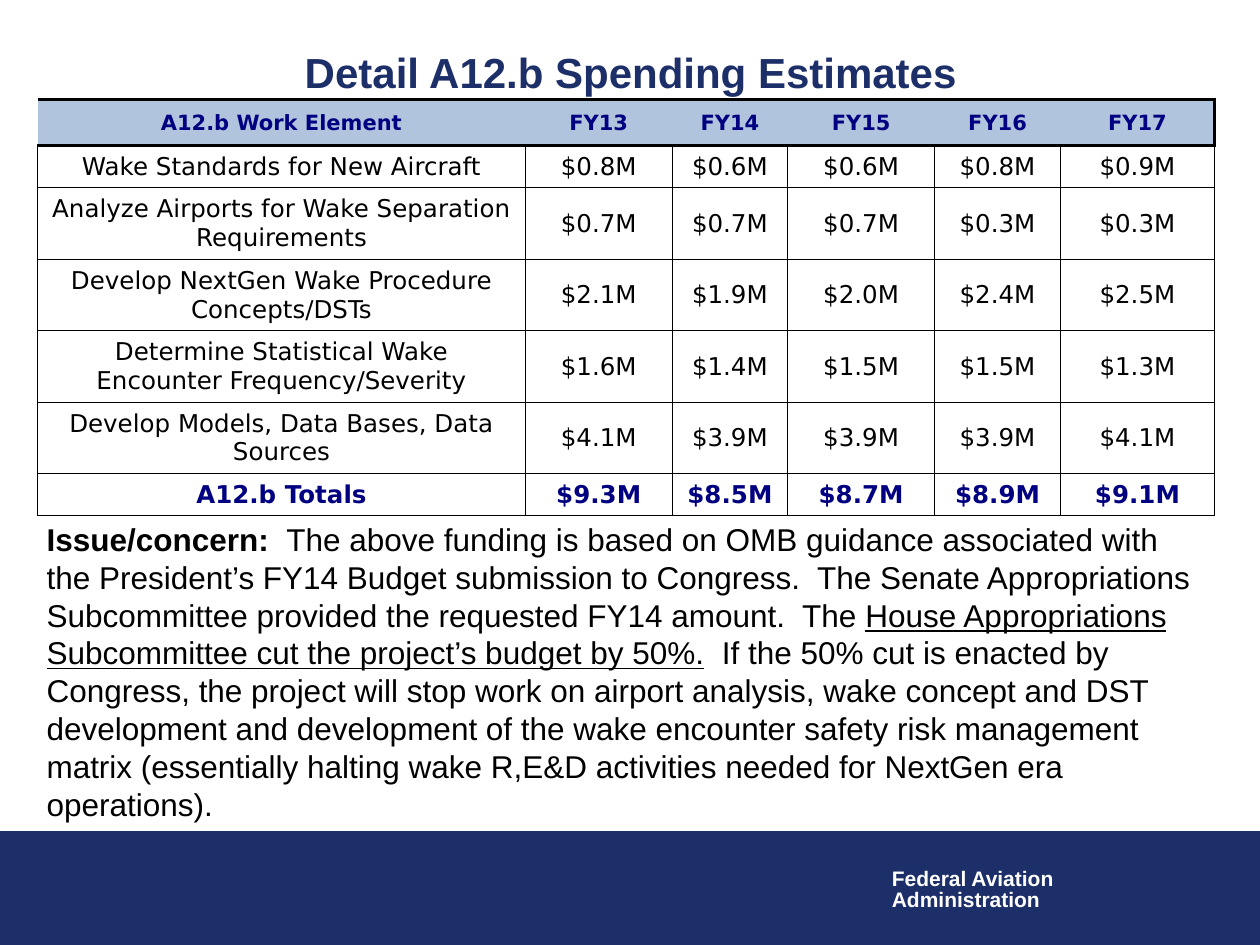
from dataclasses import dataclass

import lxml.etree
import pptx
import pptx.dml.color
import pptx.enum.shapes
import pptx.enum.text
import pptx.oxml.ns
import pptx.util
from pptx.util import Cm

Rgb = pptx.dml.color.RGBColor
CENTER = pptx.enum.text.PP_ALIGN.CENTER
MIDDLE = pptx.enum.text.MSO_ANCHOR.MIDDLE


@dataclass(frozen=True)
class Style:
    size: float
    color: Rgb
    bold: bool = False
    family: str = "Arial"


@dataclass(frozen=True)
class Theme:
    navy: Rgb = Rgb(0x1D, 0x2F, 0x68)
    header_fill: Rgb = Rgb(0xB0, 0xC4, 0xDE)
    white: Rgb = Rgb(255, 255, 255)
    title: Style = Style(24, Rgb(0x1D, 0x2F, 0x68), True)
    agency: Style = Style(12, Rgb(255, 255, 255), True)
    concern: Style = Style(18, Rgb(0, 0, 0))
    header: Style = Style(12, Rgb(0, 0, 0x80), True, "DejaVu Sans")
    element: Style = Style(14, Rgb(0, 0, 0), False, "DejaVu Sans")
    total: Style = Style(14, Rgb(0, 0, 0x80), True, "DejaVu Sans")
    thin: float = 0.75
    thick: float = 2


@dataclass(frozen=True)
class Box:
    left: float
    top: float
    width: float
    height: float

    def lengths(self) -> tuple:
        return Cm(self.left), Cm(self.top), Cm(self.width), Cm(self.height)


@dataclass(frozen=True)
class Span:
    text: str
    bold: bool | None = None
    underline: bool | None = None


@dataclass(frozen=True)
class SpendingRow:
    label: str
    amounts: str
    height: float


THEME = Theme()
YEARS = SpendingRow("A12.b Work Element", "FY13 FY14 FY15 FY16 FY17", 0.93)
ELEMENTS = [
    SpendingRow("Wake Standards for New Aircraft", "$0.8M $0.6M $0.6M $0.8M $0.9M", 0.84),
    SpendingRow("Analyze Airports for Wake Separation Requirements",
                "$0.7M $0.7M $0.7M $0.3M $0.3M", 1.41),
    SpendingRow("Develop NextGen Wake Procedure Concepts/DSTs",
                "$2.1M $1.9M $2.0M $2.4M $2.5M", 1.41),
    SpendingRow("Determine Statistical Wake Encounter Frequency/Severity",
                "$1.6M $1.4M $1.5M $1.5M $1.3M", 1.41),
    SpendingRow("Develop Models, Data Bases, Data Sources",
                "$4.1M $3.9M $3.9M $3.9M $4.1M", 1.41),
]
TOTALS = SpendingRow("A12.b Totals", "$9.3M $8.5M $8.7M $8.9M $9.1M", 0.84)
COLUMN_WIDTHS = [9.83, 2.96, 2.33, 2.96, 2.54, 3.1]

CONCERN = [
    [Span("Issue/concern:  ", bold=True),
     Span("The above funding is based on OMB guidance associated with")],
    [Span("the President’s FY14 Budget submission to Congress.  The Senate Appropriations "
          "Subcommittee provided the requested FY14 amount.  The "),
     Span("House Appropriations Subcommittee cut the project’s budget by 50%.", underline=True),
     Span("  If the 50% cut is enacted by Congress, the project will stop work on airport "
          "analysis, wake concept and DST development and development of the wake encounter "
          "safety risk management matrix (essentially halting wake R,E&D activities needed "
          "for NextGen era operations).")],
]


def apply_style(paragraph, style: Style) -> None:
    paragraph.font.name = style.family
    paragraph.font.size = pptx.util.Pt(style.size)
    paragraph.font.bold = style.bold
    paragraph.font.color.rgb = style.color


def add_text(slide, box: Box, paragraphs: list[list[Span]], style: Style, align=None,
             anchor=None, spacing: float | None = None, wrap: bool = True) -> None:
    frame = slide.shapes.add_textbox(*box.lengths()).text_frame
    frame.word_wrap = wrap
    frame.vertical_anchor = anchor
    for index, spans in enumerate(paragraphs):
        paragraph = frame.paragraphs[0] if index == 0 else frame.add_paragraph()
        paragraph.alignment = align
        paragraph.line_spacing = spacing
        apply_style(paragraph, style)
        for span in spans:
            run = paragraph.add_run()
            run.text = span.text
            run.font.bold = span.bold
            run.font.underline = span.underline


def set_border(cell, side: str, width: float) -> None:
    properties = cell._tc.get_or_add_tcPr()
    qn = pptx.oxml.ns.qn
    line = lxml.etree.SubElement(properties, qn(f"a:ln{side}"), w=str(pptx.util.Pt(width)))
    if width == 0:
        lxml.etree.SubElement(line, qn("a:noFill"))
        return
    fill = lxml.etree.SubElement(line, qn("a:solidFill"))
    lxml.etree.SubElement(fill, qn("a:srgbClr"), val="000000")


def fill_row(table, index: int, row: SpendingRow, style: Style, color: Rgb) -> None:
    table.rows[index].height = Cm(row.height)
    is_header = index == 0
    side_width = 0 if is_header else THEME.thin
    last = len(COLUMN_WIDTHS) - 1
    for column, text in enumerate([row.label, *row.amounts.split()]):
        cell = table.cell(index, column)
        cell.text = text
        cell.vertical_anchor = MIDDLE
        paragraph = cell.text_frame.paragraphs[0]
        paragraph.alignment = CENTER
        apply_style(paragraph, style)
        set_border(cell, "L", side_width)
        set_border(cell, "R", THEME.thick if is_header and column == last else side_width)
        set_border(cell, "T", THEME.thick if index <= 1 else THEME.thin)
        set_border(cell, "B", THEME.thick if is_header else THEME.thin)
        cell.fill.solid()
        cell.fill.fore_color.rgb = color


def add_spending_table(slide, box: Box) -> None:
    table = slide.shapes.add_table(len(ELEMENTS) + 2, len(COLUMN_WIDTHS), *box.lengths()).table
    for column, width in zip(table.columns, COLUMN_WIDTHS):
        column.width = Cm(width)
    fill_row(table, 0, YEARS, THEME.header, THEME.header_fill)
    for index, element in enumerate(ELEMENTS, 1):
        fill_row(table, index, element, THEME.element, THEME.white)
    fill_row(table, len(ELEMENTS) + 1, TOTALS, THEME.total, THEME.white)


def add_footer(slide, box: Box) -> None:
    band = slide.shapes.add_shape(pptx.enum.shapes.MSO_SHAPE.RECTANGLE, *box.lengths())
    band.shadow.inherit = False
    band.fill.solid()
    band.fill.fore_color.rgb = THEME.navy
    band.line.color.rgb = THEME.navy
    band.line.width = pptx.util.Pt(THEME.thin)
    add_text(slide, Box(17.73, 17.4, 3.81, 1.12),
             [[Span("Federal Aviation")], [Span("Administration")]],
             THEME.agency, spacing=0.85, wrap=False)


def main() -> None:
    deck = pptx.Presentation()
    deck.slide_width, deck.slide_height = Cm(25.4), Cm(19.05)
    slide = deck.slides.add_slide(deck.slide_layouts[6])
    add_footer(slide, Box(0, 16.76, 25.4, 2.27))
    add_text(slide, Box(0.94, 0.86, 23.55, 1.17),
             [[Span("Detail A12.b Spending Estimates")]], THEME.title, CENTER, MIDDLE)
    add_spending_table(slide, Box(0.76, 2.01, sum(COLUMN_WIDTHS), 8.25))
    add_text(slide, Box(0.69, 10.36, 23.88, 6.4), CONCERN, THEME.concern)
    deck.save("out.pptx")


if __name__ == "__main__":
    main()
